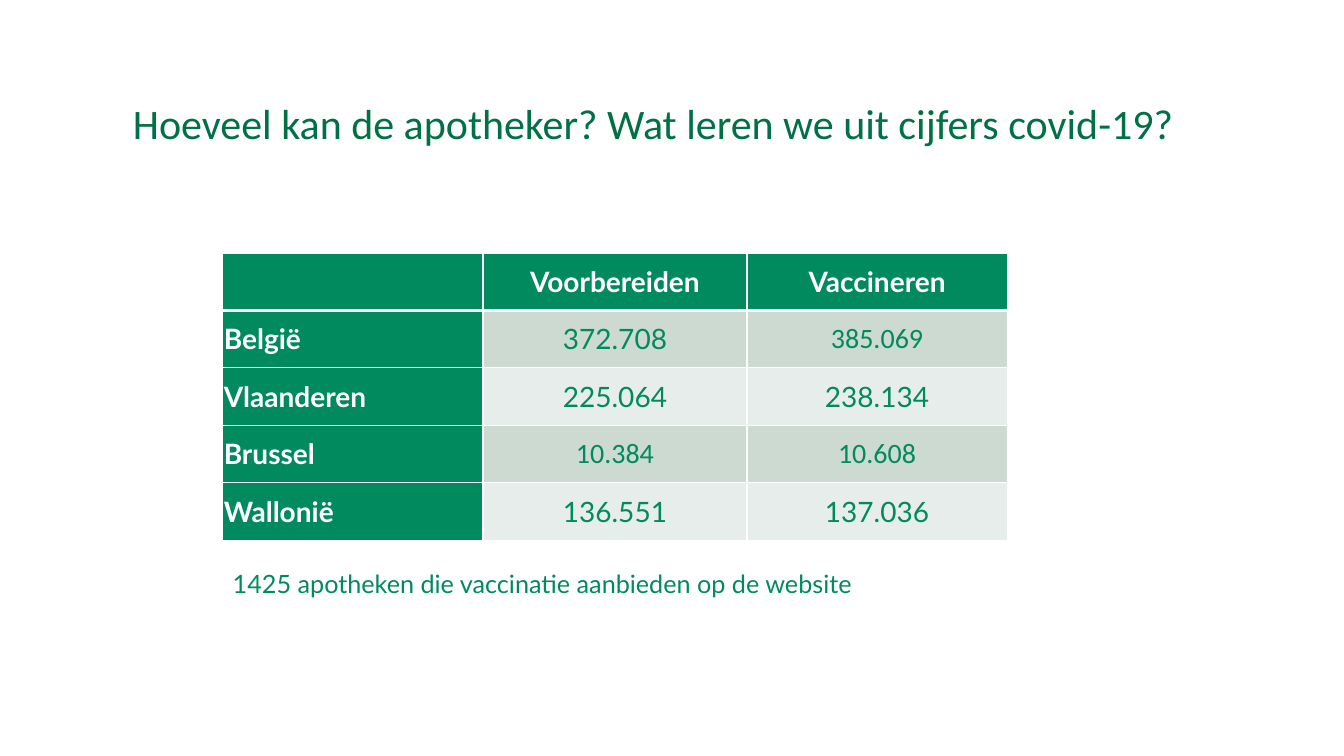
import pptx
import pptx.util
import pptx.dml.color
import pptx.enum.text
import pptx.oxml
import pptx.oxml.ns

Inches = pptx.util.Inches
RGBColor = pptx.dml.color.RGBColor
ALIGN = pptx.enum.text.PP_ALIGN
MIDDLE = pptx.enum.text.MSO_ANCHOR.MIDDLE

# Content
TITLE = "Hoeveel kan de apotheker? Wat leren we uit cijfers covid-19?"
NOTE = "1425 apotheken die vaccinatie aanbieden op de website"
ROWS = [
    ("", "Voorbereiden", "Vaccineren"),
    ("België", "372.708", "385.069"),
    ("Vlaanderen", "225.064", "238.134"),
    ("Brussel", "10.384", "10.608"),
    ("Wallonië", "136.551", "137.036"),
]
CALIBRI_VALUES = {"385.069", "10.384", "10.608"}

# Layout and colours
TABLE_LEFT, TABLE_TOP, TABLE_WIDTH = 2.21, 2.51, 7.78
COLUMN_WIDTHS = (2.58, 2.62, 2.58)
ROW_HEIGHT = 0.57
DARK_GREEN = RGBColor(0x00, 0x71, 0x46)
GREEN = RGBColor(0x00, 0x8A, 0x5E)
BANDS = (RGBColor(0xE7, 0xED, 0xEA), RGBColor(0xCC, 0xDA, 0xD2))
WHITE = RGBColor(0xFF, 0xFF, 0xFF)


def write_text(frame, text, size=20, font="Lato", color=GREEN, bold=False,
               align=ALIGN.LEFT, line_spacing=None):
    para = frame.paragraphs[0]
    para.alignment = align
    para.line_spacing = line_spacing
    span = para.add_run()
    span.text = text
    span.font.size = pptx.util.Pt(size)
    span.font.name = font
    span.font.bold = bold
    span.font.color.rgb = color


def add_box(page, left, top, width, height):
    box = page.shapes.add_textbox(
        Inches(left), Inches(top), Inches(width), Inches(height))
    box.text_frame.word_wrap = True
    return box.text_frame


def set_borders(cell, bottom):
    properties = cell._tc.get_or_add_tcPr()
    widths = {"lnL": 1, "lnR": 1, "lnT": 1, "lnB": bottom}
    for position, (side, points) in enumerate(widths.items()):
        properties.insert(position, pptx.oxml.parse_xml(
            f'<a:{side} {pptx.oxml.ns.nsdecls("a")} w="{pptx.util.Pt(points)}">'
            f'<a:solidFill><a:srgbClr val="{WHITE}"/></a:solidFill></a:{side}>'))


def add_figures_table(page):
    table = page.shapes.add_table(
        len(ROWS), len(COLUMN_WIDTHS), Inches(TABLE_LEFT), Inches(TABLE_TOP),
        Inches(TABLE_WIDTH), Inches(ROW_HEIGHT * len(ROWS))).table
    for column, width in zip(table.columns, COLUMN_WIDTHS):
        column.width = Inches(width)
    for row_index, values in enumerate(ROWS):
        table.rows[row_index].height = Inches(ROW_HEIGHT)
        for column_index, value in enumerate(values):
            cell = table.cell(row_index, column_index)
            heading = row_index == 0 or column_index == 0
            cell.fill.solid()
            cell.fill.fore_color.rgb = GREEN if heading else BANDS[row_index % 2]
            set_borders(cell, bottom=3 if row_index == 0 else 1)
            cell.vertical_anchor = MIDDLE
            cell.margin_left = cell.margin_right = Inches(0.01)
            cell.margin_top = cell.margin_bottom = Inches(0.01)
            if value:
                write_text(cell.text_frame, value, bold=heading,
                           font="Calibri" if value in CALIBRI_VALUES else "Lato",
                           color=WHITE if heading else GREEN,
                           align=ALIGN.CENTER if column_index else ALIGN.LEFT)


def main():
    deck = pptx.Presentation()
    deck.slide_width, deck.slide_height = Inches(13.33), Inches(7.5)
    page = deck.slides.add_slide(deck.slide_layouts[6])

    # Title
    title = add_box(page, 1.22, 0.6, 11.12, 1.29)
    title.vertical_anchor = MIDDLE
    write_text(title, TITLE, size=30, font="Calibri", color=DARK_GREEN,
               line_spacing=0.9)

    # Table and the note below it
    add_figures_table(page)
    note = add_box(page, TABLE_LEFT, 5.59, TABLE_WIDTH, 0.4)
    write_text(note, NOTE, size=18)

    deck.save("out.pptx")


if __name__ == "__main__":
    main()
